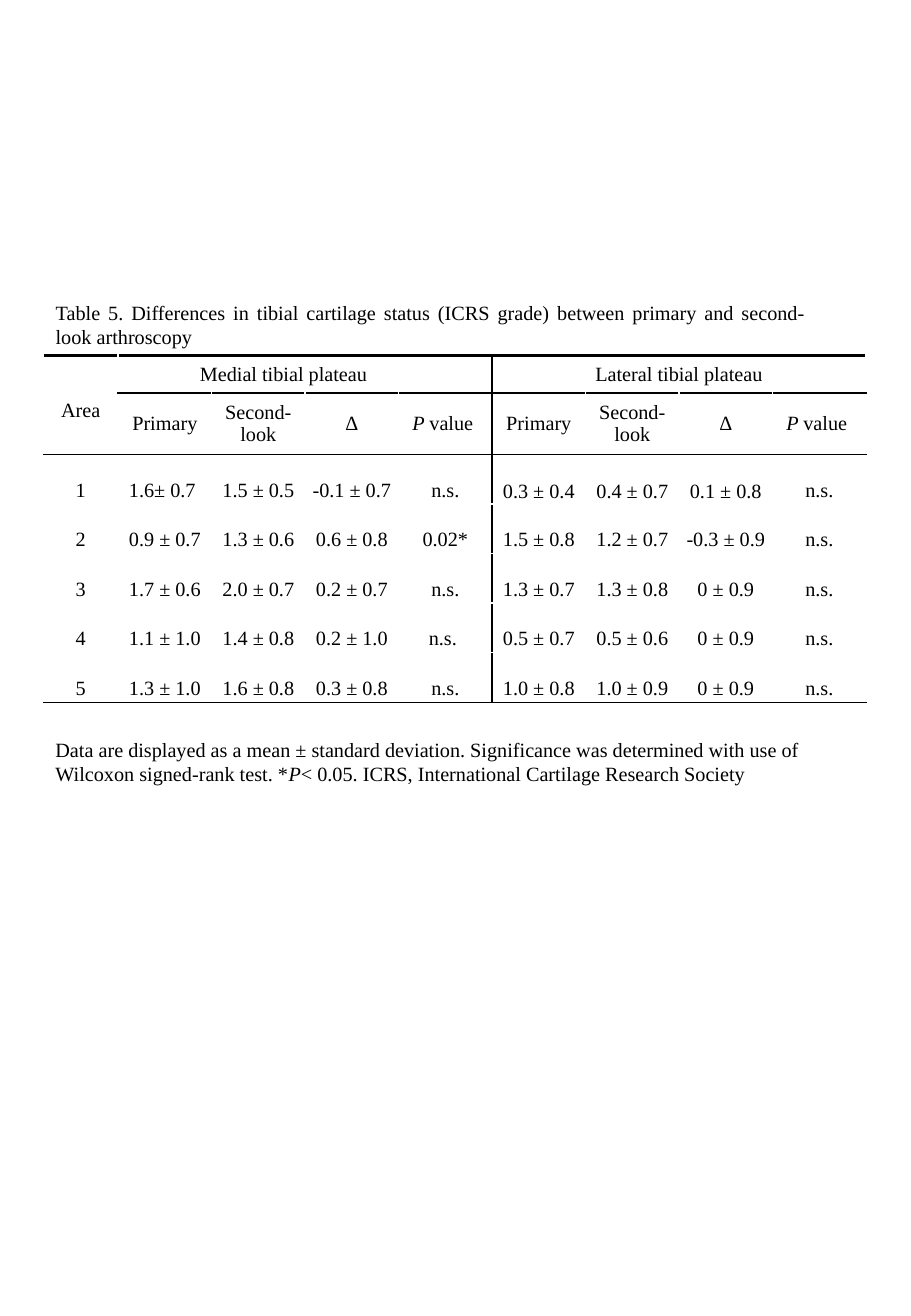
from lxml import etree
from pptx import Presentation
from pptx.dml.color import RGBColor
from pptx.enum.text import MSO_ANCHOR, MSO_AUTO_SIZE, PP_ALIGN
from pptx.oxml.ns import qn
from pptx.util import Cm, Pt

LEFT, CENTER, JUSTIFY = PP_ALIGN.LEFT, PP_ALIGN.CENTER, PP_ALIGN.JUSTIFY
TOP, MIDDLE, BOTTOM = MSO_ANCHOR.TOP, MSO_ANCHOR.MIDDLE, MSO_ANCHOR.BOTTOM
GROW = MSO_AUTO_SIZE.SHAPE_TO_FIT_TEXT
BLACK = RGBColor(0x00, 0x00, 0x00)
WHITE = RGBColor(0xFF, 0xFF, 0xFF)

CAPTION = ("Table 5. Differences in tibial cartilage status (ICRS grade) "
           "between primary and second-look arthroscopy")
NOTE = [("Data are displayed as a mean ± standard deviation. Significance was "
         "determined with use of Wilcoxon signed-rank test. *", False),
        ("P", True),
        ("< 0.05. ICRS, International Cartilage Research Society", False)]
P_VALUE = [("P ", True), ("value ", False)]
MEASURES = ["Primary ", "Second-look", "Δ", P_VALUE]
RESULTS = [
    ["1", "1.6± 0.7 ", "1.5 ± 0.5", "-0.1 ± 0.7", "n.s.",
     "0.3 ± 0.4", "0.4 ± 0.7", "0.1 ± 0.8", "n.s."],
    ["2", "0.9 ± 0.7", "1.3 ± 0.6", "0.6 ± 0.8", "0.02*",
     "1.5 ± 0.8", "1.2 ± 0.7", "-0.3 ± 0.9", "n.s."],
    ["3", "1.7 ± 0.6", "2.0 ± 0.7", "0.2 ± 0.7", "n.s.",
     "1.3 ± 0.7", "1.3 ± 0.8", "0 ± 0.9", "n.s."],
    ["4", "1.1 ± 1.0", "1.4 ± 0.8", "0.2 ± 1.0", "n.s. ",
     "0.5 ± 0.7", "0.5 ± 0.6", "0 ± 0.9", "n.s."],
    ["5", "1.3 ± 1.0", "1.6 ± 0.8", "0.3 ± 0.8", "n.s.",
     "1.0 ± 0.8", "1.0 ± 0.9", "0 ± 0.9", "n.s."],
]
MEDIAL, LATERAL = 1, 5  # first column of each plateau
TABLE_WIDTH, AREA_WIDTH = 17.2, 1.56
ROW_HEIGHTS = [0.79, 1.2] + [1.03] * len(RESULTS)


def assign(target, values):
    for name, value in values.items():
        setattr(target, name, value)


class Page:
    font = {"name": "Times New Roman", "size": Pt(12), "bold": False}

    def __init__(self, deck):
        self.slide = deck.slides.add_slide(deck.slide_layouts[5])

    def fill_text(self, frame, spans, align=LEFT, spacing=1.0):
        if isinstance(spans, str):
            spans = [(spans, False)]
        para = frame.paragraphs[0]
        assign(para, {"alignment": align, "line_spacing": spacing})
        for text, italic in spans:
            span = para.add_run()
            span.text = text
            assign(span.font, {**self.font, "italic": italic})
            span.font.color.rgb = BLACK

    def place(self, box, left, top, width, height):
        assign(box, {"left": Cm(left), "top": Cm(top),
                     "width": Cm(width), "height": Cm(height)})
        assign(box.text_frame, {"word_wrap": True, "auto_size": GROW,
                                "vertical_anchor": TOP})

    def title(self, text, *position):
        box = self.slide.shapes.title
        self.place(box, *position)
        self.fill_text(box.text_frame, text, JUSTIFY)

    def text(self, spans, *position):
        box = self.slide.shapes.add_textbox(0, 0, 0, 0)
        self.place(box, *position)
        self.fill_text(box.text_frame, spans)

    def table(self, left, top, widths, heights):
        frame = self.slide.shapes.add_table(
            len(heights), len(widths), Cm(left), Cm(top),
            Cm(sum(widths)), Cm(sum(heights)))
        table = frame.table
        assign(table, {"first_row": False, "horz_banding": False})
        for column, width in zip(table.columns, widths):
            column.width = Cm(width)
        for row, height in zip(table.rows, heights):
            row.height = Cm(height)
        return table

    def cell(self, cell, spans, anchor=MIDDLE, align=CENTER, spacing=1.0,
             side=0.25, edge=0.13, indent=0):
        assign(cell, {"vertical_anchor": anchor,
                      "margin_left": Cm(side + indent), "margin_right": Cm(side),
                      "margin_top": Cm(edge), "margin_bottom": Cm(edge)})
        if spans:
            self.fill_text(cell.text_frame, spans, align, spacing)

    def borders(self, cell, lines):
        properties = cell._tc.get_or_add_tcPr()
        for side in "LRTB":
            color, width = lines.get(side, (WHITE, 1))
            line = etree.SubElement(properties, qn(f"a:ln{side}"), w=str(Pt(width)))
            fill = etree.SubElement(line, qn("a:solidFill"))
            etree.SubElement(fill, qn("a:srgbClr"), val=str(color))
        cell.fill.background()


def rules(row, column):
    """Black lines around one cell; every other side stays white."""
    thin, thick = (BLACK, 1), (BLACK, 1.5)
    grouped = column >= MEDIAL
    lines = {}
    if row == 0 or (row == 1 and grouped):
        lines["T"] = thick
    if row == 2:
        lines["T"] = thin
    if row == 0 and grouped:
        lines["B"] = thick
    if row in (1, len(ROW_HEIGHTS) - 1):
        lines["B"] = thin
    if column == LATERAL:
        lines["L"] = thin
    if column == LATERAL - 1 or (row == 0 and column == MEDIAL):
        lines["R"] = thin
    return lines


def main():
    deck = Presentation()
    assign(deck, {"slide_width": Cm(19.05), "slide_height": Cm(27.51)})
    page = Page(deck)

    # Caption
    page.title(CAPTION, 0.91, 6.15, 16.2, 1.27)

    # Table frame with one merged heading per plateau
    measure_width = (TABLE_WIDTH - AREA_WIDTH) / 8
    table = page.table(0.91, 7.43, [AREA_WIDTH] + [measure_width] * 8, ROW_HEIGHTS)
    for first in (MEDIAL, LATERAL):
        table.cell(0, first).merge(table.cell(0, first + 3))

    # Headings
    page.cell(table.cell(0, 0), "", side=0, edge=0)
    page.cell(table.cell(0, MEDIAL), "Medial tibial plateau", align=LEFT, indent=1.46)
    page.cell(table.cell(0, LATERAL), "Lateral tibial plateau")
    page.cell(table.cell(1, 0), "Area", anchor=TOP)
    for column, measure in enumerate(MEASURES * 2, MEDIAL):
        page.cell(table.cell(1, column), measure)

    # Results
    for row, values in enumerate(RESULTS, 2):
        for column, value in enumerate(values):
            low = row == 2 and LATERAL <= column < LATERAL + 3
            page.cell(table.cell(row, column), value, BOTTOM if low else MIDDLE,
                      spacing=2.0, side=0.02, edge=0.01)

    # Ruling
    for row in range(len(ROW_HEIGHTS)):
        for column in range(9):
            cell = table.cell(row, column)
            if not cell.is_spanned:
                page.borders(cell, rules(row, column))

    # Footnote
    page.text(NOTE, 0.91, 15.29, 16.8, 1.27)

    deck.save("out.pptx")


if __name__ == "__main__":
    main()
